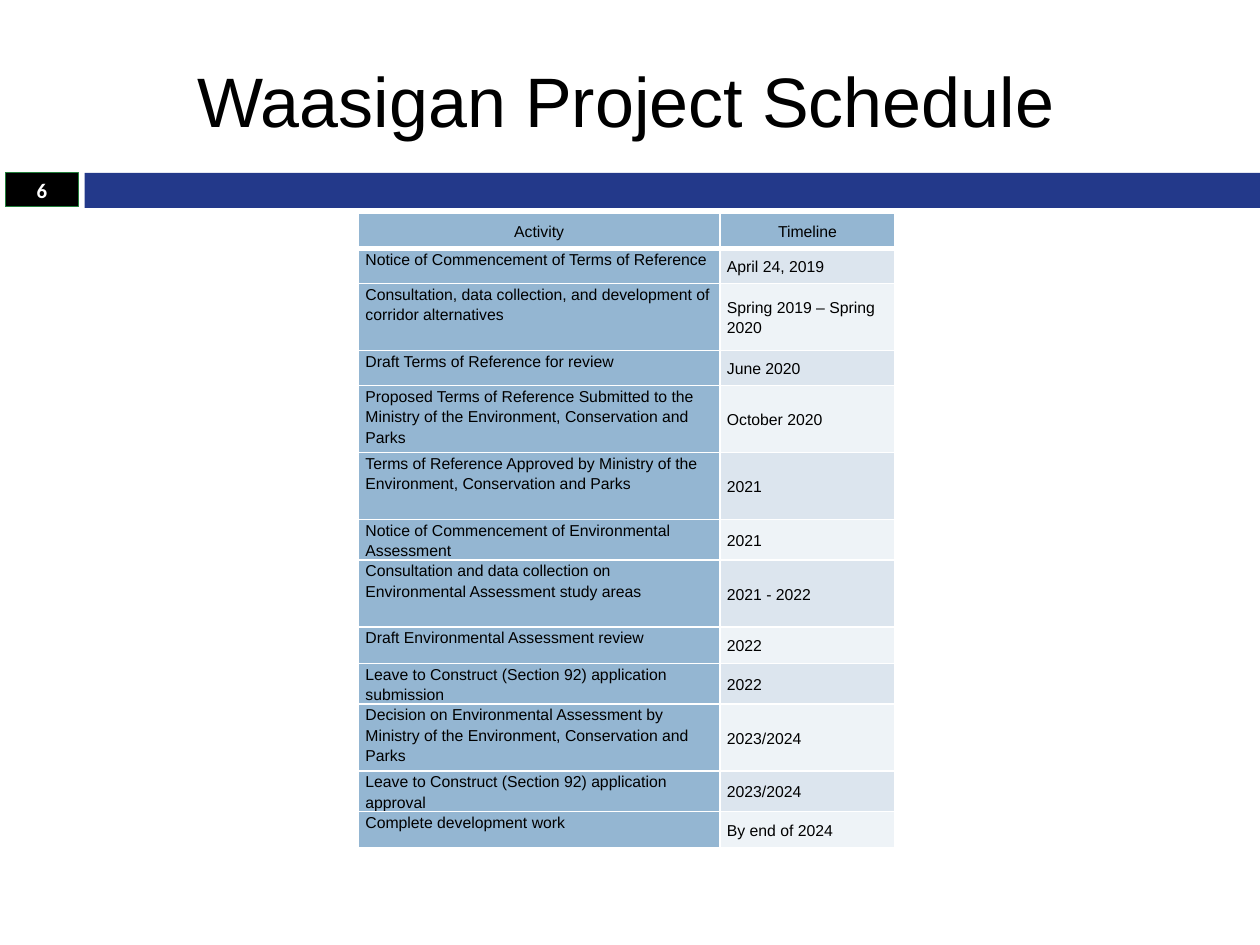
"""Build the Waasigan project schedule slide."""
from lxml import etree
from pptx import Presentation
from pptx.dml.color import RGBColor as RGB
from pptx.enum.shapes import MSO_SHAPE as SHAPE
from pptx.enum.text import MSO_ANCHOR as ANCHOR, PP_ALIGN as ALIGN
from pptx.oxml.ns import qn
from pptx.util import Pt

COLORS = {
    "black": "000000", "white": "FFFFFF", "bar": "23398A", "edge": "227F3B",
    "head": "94B6D2", "odd": "DCE5EE", "even": "EEF3F7",
}
SHORT, MEDIUM, TALL = 20.2, 20.9, 38.2
ROWS = [
    ("Activity", "Timeline", SHORT),
    ("Notice of Commencement of Terms of Reference", "April 24, 2019", SHORT),
    ("Consultation, data collection, and development of corridor alternatives",
     "Spring 2019 – Spring 2020", TALL),
    ("Draft Terms of Reference for review", "June 2020", SHORT),
    ("Proposed Terms of Reference Submitted to the Ministry of the Environment, "
     "Conservation and Parks", "October 2020", TALL),
    ("Terms of Reference Approved by Ministry of the Environment, "
     "Conservation and Parks", "2021", TALL),
    ("Notice of Commencement of Environmental Assessment", "2021", SHORT),
    ("Consultation and data collection on Environmental Assessment study areas",
     "2021 - 2022", TALL),
    ("Draft Environmental Assessment review", "2022", MEDIUM),
    ("Leave to Construct (Section 92) application submission", "2022", SHORT),
    ("Decision on Environmental Assessment by Ministry of the Environment, "
     "Conservation and Parks", "2023/2024", TALL),
    ("Leave to Construct (Section 92) application approval", "2023/2024", SHORT),
    ("Complete development work", "By end of 2024", MEDIUM),
]


def color(name):
    return RGB.from_string(COLORS[name])


def set_text(tf, text, size, font, fill, align):
    p = tf.paragraphs[0]
    p.text, p.alignment = text, align
    p.font.size, p.font.name = Pt(size), font
    p.font.color.rgb = color(fill)
    return p


prs = Presentation()
prs.slide_width, prs.slide_height = Pt(720), Pt(540)
s = prs.slides.add_slide(prs.slide_layouts[5])

bar = s.shapes.add_shape(SHAPE.RECTANGLE, Pt(48.4), Pt(98.8), Pt(671.6), Pt(20))
bar.shadow.inherit = False
bar.fill.solid()
bar.fill.fore_color.rgb = color("bar")
bar.line.fill.background()

title = s.shapes.title
title.left, title.top, title.width, title.height = Pt(25.2), Pt(18), Pt(664.6), Pt(77.8)
title.text_frame.vertical_anchor = ANCHOR.MIDDLE
set_text(title.text_frame, "Waasigan Project Schedule", 40, "Arial", "black", ALIGN.CENTER)

table = s.shapes.add_table(len(ROWS), 2, Pt(204.8), Pt(121.7), Pt(306.7), Pt(354)).table
table.horz_banding = False
table.columns[0].width, table.columns[1].width = Pt(206.6), Pt(100.1)
for i, (activity, timeline, height) in enumerate(ROWS):
    table.rows[i].height = Pt(height)
    for j, text in enumerate((activity, timeline)):
        cell = table.cell(i, j)
        cell.margin_left = cell.margin_right = Pt(4)
        cell.margin_top = cell.margin_bottom = 0
        cell.vertical_anchor = ANCHOR.TOP if i and j == 0 else ANCHOR.MIDDLE
        p = set_text(cell.text_frame, text, 9, "Arial", "black",
                     ALIGN.LEFT if i else ALIGN.CENTER)
        p.font.bold = False
        p.line_spacing = 1.15
        p.space_before = p.space_after = Pt(1)
        widths = {"lnL": 1, "lnR": 1, "lnT": 3 if i == 1 else 1, "lnB": 1 if i else 3}
        for tag, width in widths.items():
            ln = etree.SubElement(cell._tc.get_or_add_tcPr(), qn(f"a:{tag}"), w=str(Pt(width)))
            fill = etree.SubElement(ln, qn("a:solidFill"))
            etree.SubElement(fill, qn("a:srgbClr"), val=COLORS["white"])
        cell.fill.solid()
        cell.fill.fore_color.rgb = color(
            "head" if i == 0 or j == 0 else "odd" if i % 2 else "even")

number = s.shapes.add_shape(SHAPE.RECTANGLE, Pt(3), Pt(98.8), Pt(41.8), Pt(19.4))
number.shadow.inherit = False
number.fill.solid()
number.fill.fore_color.rgb = color("black")
number.line.color.rgb = color("edge")
number.line.width = Pt(0.75)
tf = number.text_frame
tf.margin_top = tf.margin_bottom = 0
tf.vertical_anchor = ANCHOR.MIDDLE
set_text(tf, "6", 11.9, "Calibri", "white", ALIGN.CENTER).font.bold = True

prs.save("out.pptx")
